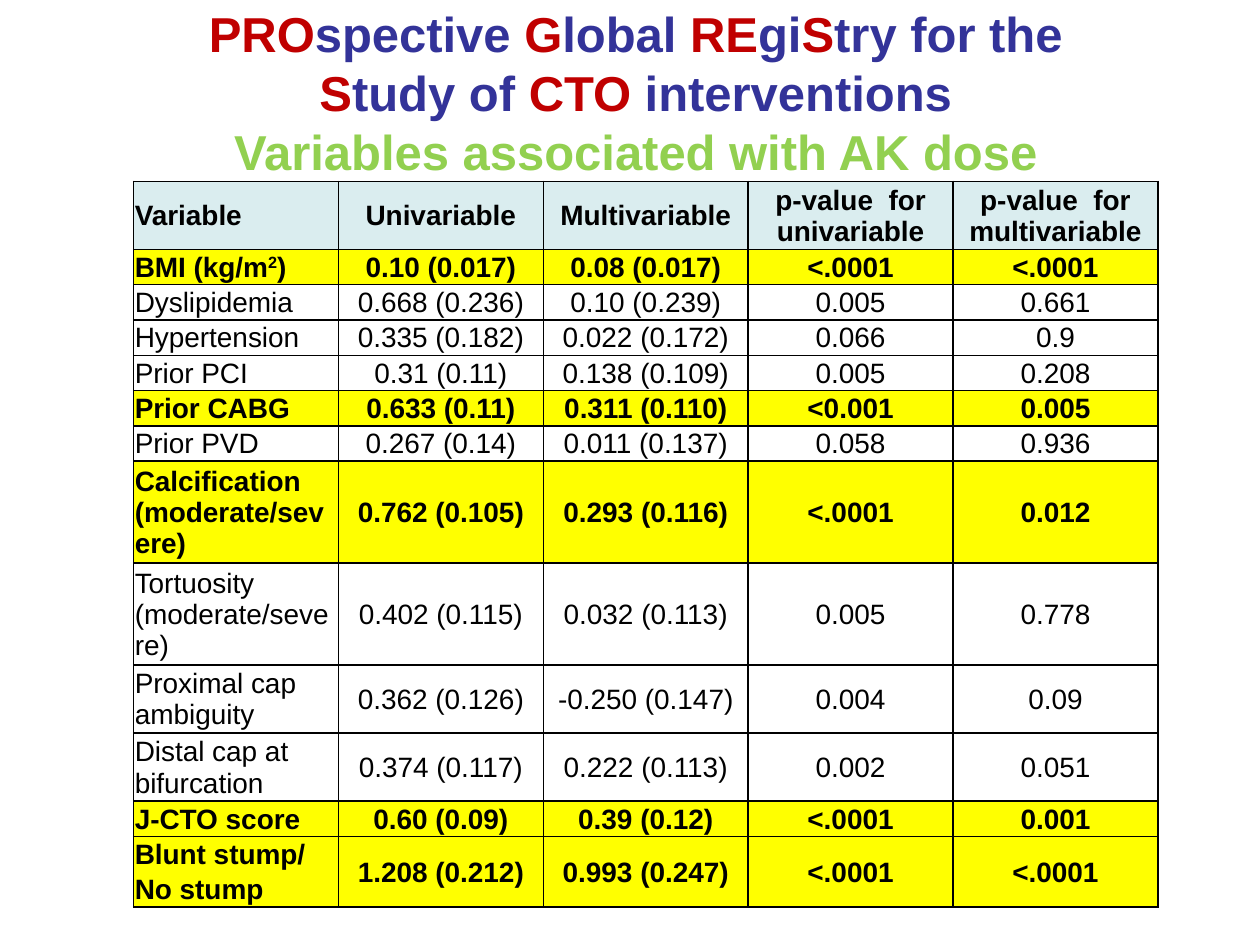
from dataclasses import dataclass
from itertools import cycle

from lxml import etree
from pptx import Presentation
from pptx.dml.color import RGBColor
from pptx.enum.text import MSO_ANCHOR, PP_ALIGN
from pptx.oxml.ns import qn
from pptx.util import Inches, Pt

CENTER, LEFT = PP_ALIGN.CENTER, PP_ALIGN.LEFT
MIDDLE = MSO_ANCHOR.MIDDLE
BLANK_LAYOUT = 6


@dataclass(frozen=True)
class Theme:
    font: str = "Arial"
    title_size: int = 28
    table_size: int = 16
    border_width: int = 1
    accent: str = "C00000"
    title: str = "333399"
    subtitle: str = "92D050"
    text: str = "000000"
    header_fill: str = "DAEDEF"
    highlight_fill: str = "FFFF00"


# Red and blue pieces alternate, starting with red
TITLE_PIECES = ("PRO", "spective ", "G", "lobal ", "RE", "gi", "S", "try for the ",
                "S", "tudy of ", "CTO ", "interventions")
SUBTITLE = "Variables associated with AK dose"

HEADER = ("Variable", "Univariable", "Multivariable",
          "p-value  for univariable", "p-value  for multivariable")
# Each row: highlighted, lines of text, cells; ^ marks a superscript piece
ROWS = (
    (True, 1, ("BMI (kg/m^2^)", "0.10 (0.017)", "0.08 (0.017)", "<.0001", "<.0001")),
    (False, 1, ("Dyslipidemia", "0.668 (0.236)", "0.10 (0.239)", "0.005", "0.661")),
    (False, 1, ("Hypertension", "0.335 (0.182)", "0.022 (0.172)", "0.066", "0.9")),
    (False, 1, ("Prior PCI", "0.31 (0.11)", "0.138 (0.109)", "0.005", "0.208")),
    (True, 1, ("Prior CABG", "0.633 (0.11)", "0.311 (0.110)", "<0.001", "0.005")),
    (False, 1, ("Prior PVD", "0.267 (0.14)", "0.011 (0.137)", "0.058", "0.936")),
    (True, 3, ("Calcification (moderate/severe)", "0.762 (0.105)", "0.293 (0.116)",
               "<.0001", "0.012")),
    (False, 3, ("Tortuosity  (moderate/severe)", "0.402 (0.115)", "0.032 (0.113)",
                "0.005", "0.778")),
    (False, 2, ("Proximal cap ambiguity", "0.362 (0.126)", "-0.250 (0.147)",
                "0.004", "0.09")),
    (False, 2, ("Distal cap at bifurcation", "0.374 (0.117)", "0.222 (0.113)",
                "0.002", "0.051")),
    (True, 1, ("J-CTO score", "0.60 (0.09)", "0.39 (0.12)", "<.0001", "0.001")),
    (True, 1, ("Blunt stump/", "1.208 (0.212)", "0.993 (0.247)", "<.0001", "<.0001")),
    (True, 1, ("No stump", "", "", "", "")),
)
# Row height in inches by lines of text
ROW_HEIGHTS = {1: 0.28, 2: 0.54, 3: 0.81}


class SlideBuilder:
    def __init__(self, slide, theme):
        self.slide = slide
        self.theme = theme

    def style(self, paragraph, size, alignment, bold=True, color=None):
        paragraph.alignment = alignment
        font = paragraph.font
        font.name, font.size, font.bold = self.theme.font, Pt(size), bold
        if color:
            font.color.rgb = RGBColor.from_string(color)

    def title(self, left, top, width, height):
        theme = self.theme
        frame = self.slide.shapes.add_textbox(
            Inches(left), Inches(top), Inches(width), Inches(height)).text_frame
        frame.word_wrap = True
        frame.vertical_anchor = MIDDLE
        heading = frame.paragraphs[0]
        self.style(heading, theme.title_size, CENTER)
        for piece, color in zip(TITLE_PIECES, cycle((theme.accent, theme.title))):
            run = heading.add_run()
            run.text = piece
            run.font.color.rgb = RGBColor.from_string(color)
        subtitle = frame.add_paragraph()
        subtitle.text = SUBTITLE
        self.style(subtitle, theme.title_size, CENTER, color=theme.subtitle)

    def borders(self, cell, open_side=None):
        properties = cell._tc.get_or_add_tcPr()
        for side in "LRTB":
            line = etree.SubElement(properties, qn(f"a:ln{side}"),
                                    w=str(Pt(self.theme.border_width)))
            if side == open_side:
                etree.SubElement(line, qn("a:noFill"))
            else:
                fill = etree.SubElement(line, qn("a:solidFill"))
                etree.SubElement(fill, qn("a:srgbClr"), val=self.theme.text)

    def cell(self, cell, text, alignment, bold, fill, open_side=None):
        cell.margin_left = cell.margin_right = cell.margin_top = Inches(0.01)
        cell.margin_bottom = 0
        cell.vertical_anchor = MIDDLE
        self.borders(cell, open_side)
        if fill:
            cell.fill.solid()
            cell.fill.fore_color.rgb = RGBColor.from_string(fill)
        else:
            cell.fill.background()
        paragraph = cell.text_frame.paragraphs[0]
        self.style(paragraph, self.theme.table_size, alignment, bold, self.theme.text)
        if not text:
            return
        for index, piece in enumerate(text.split("^")):
            run = paragraph.add_run()
            run.text = piece
            if index % 2:
                run._r.get_or_add_rPr().set("baseline", "30000")

    def table(self, left, top, width):
        theme = self.theme
        rows = [(theme.header_fill, True, 2, HEADER)]
        rows += [(theme.highlight_fill if marked else None, marked, lines, texts)
                 for marked, lines, texts in ROWS]
        heights = [ROW_HEIGHTS[lines] for _, _, lines, _ in rows]
        # Columns share the width equally
        table = self.slide.shapes.add_table(
            len(rows), len(HEADER), Inches(left), Inches(top),
            Inches(width), Inches(sum(heights))).table
        table.first_row = table.horz_banding = False

        # The two stump labels share one set of values and no inner line
        last = len(rows) - 1
        open_sides = {(last - 1, 0): "B", (last, 0): "T"}
        for row, (fill, bold, _, texts) in enumerate(rows):
            table.rows[row].height = Inches(heights[row])
            for column, text in enumerate(texts):
                self.cell(table.cell(row, column), text, CENTER if column else LEFT,
                          bold, fill, open_sides.get((row, column)))
        for column in range(1, len(HEADER)):
            table.cell(last - 1, column).merge(table.cell(last, column))


def main():
    presentation = Presentation()
    presentation.slide_width, presentation.slide_height = Inches(10), Inches(7.5)
    slide = presentation.slides.add_slide(presentation.slide_layouts[BLANK_LAYOUT])
    builder = SlideBuilder(slide, Theme())

    # Table of variables, then the heading above it
    builder.table(1.06, 1.44, 8.13)
    builder.title(1.42, 0.27, 7.25, 0.92)

    presentation.save("out.pptx")


if __name__ == "__main__":
    main()
